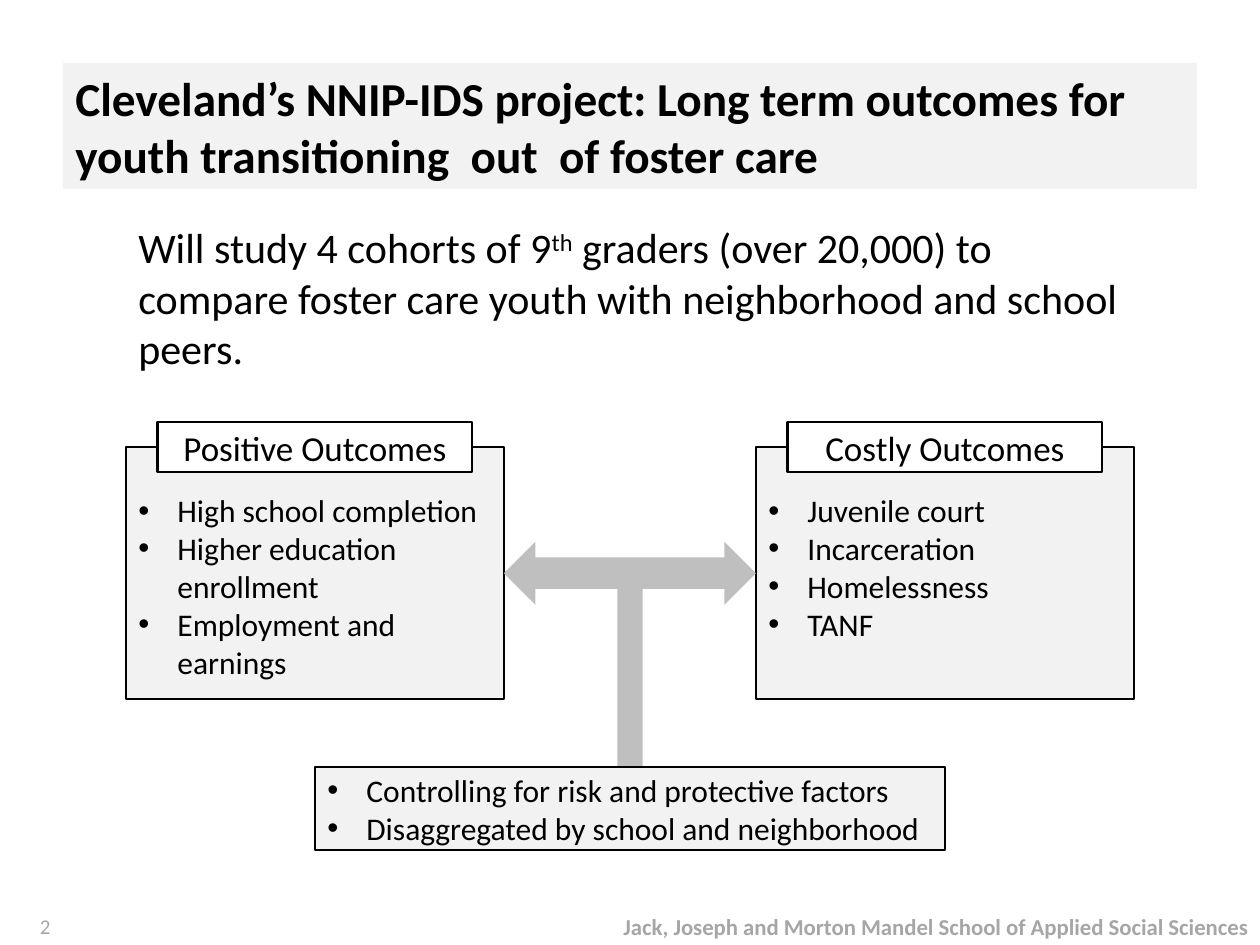
from dataclasses import dataclass

import pptx
import pptx.dml.color
import pptx.enum.shapes
import pptx.enum.text
import pptx.oxml.ns
import pptx.util
from lxml import etree

Inches = pptx.util.Inches
Kind = pptx.enum.shapes.MSO_SHAPE
Align = pptx.enum.text.PP_ALIGN
Anchor = pptx.enum.text.MSO_ANCHOR


@dataclass(frozen=True)
class Theme:
    font: str = "Calibri"
    ink: str = "000000"
    paper: str = "FFFFFF"
    panel: str = "F2F2F2"
    arrow: str = "BFBFBF"
    muted: str = "A6A6A6"
    title: float = 27
    body: float = 24
    label: float = 20
    item: float = 18
    footer: float = 13
    number: float = 12
    edge: float = 1.25


@dataclass(frozen=True)
class Box:
    left: float
    top: float
    width: float
    height: float

    def lengths(self) -> tuple:
        return tuple(Inches(n) for n in (self.left, self.top, self.width, self.height))


@dataclass(frozen=True)
class Group:
    left: float
    label: str
    items: tuple[str, ...]


THEME = Theme()
GROUPS = (
    Group(1, "Positive Outcomes",
          ("High school completion", "Higher education enrollment", "Employment and earnings")),
    Group(6, "Costly Outcomes",
          ("Juvenile court", "Incarceration", "Homelessness", "TANF")),
)
FACTORS = ("Controlling for risk and protective factors",
           "Disaggregated by school and neighborhood")


def color(code: str):
    return pptx.dml.color.RGBColor.from_string(code)


def add_shape(slide, box: Box, fill: str, edged: bool = False, kind=Kind.RECTANGLE):
    shape = slide.shapes.add_shape(kind, *box.lengths())
    shape.shadow.inherit = False
    shape.fill.solid()
    shape.fill.fore_color.rgb = color(fill)
    if edged:
        shape.line.color.rgb = color(THEME.ink)
        shape.line.width = pptx.util.Pt(THEME.edge)
    else:
        shape.line.fill.background()
    return shape


def add_bullet(par) -> None:
    props = par._p.get_or_add_pPr()
    props.set("marL", str(Inches(0.31)))
    props.set("indent", str(-Inches(0.31)))
    for tag, name, value in (("a:buFont", "typeface", "Arial"), ("a:buChar", "char", "•")):
        etree.SubElement(props, pptx.oxml.ns.qn(tag)).set(name, value)


def write(shape, lines: tuple[str, ...], size: float, ink: str = THEME.ink,
          bold: bool = False, align=Align.LEFT, anchor=Anchor.MIDDLE,
          bullets: bool = False) -> None:
    frame = shape.text_frame
    frame.word_wrap = True
    frame.vertical_anchor = anchor
    frame.text = "\n".join(lines)
    for par in frame.paragraphs:
        par.alignment = align
        par.font.name = THEME.font
        par.font.size = pptx.util.Pt(size)
        par.font.bold = bold
        par.font.color.rgb = color(ink)
        if bullets:
            add_bullet(par)


def add_text(slide, box: Box, text: str, size: float, **style):
    shape = slide.shapes.add_textbox(*box.lengths())
    write(shape, (text,), size, **style)
    return shape


def add_group(slide, group: Group) -> None:
    panel = add_shape(slide, Box(group.left, 3.55, 3, 2), THEME.panel, edged=True)
    write(panel, group.items, THEME.item, anchor=Anchor.TOP, bullets=True)
    panel.text_frame.margin_top = Inches(0.35)  # room under the label
    label = add_shape(slide, Box(group.left + 0.25, 3.35, 2.5, 0.4), THEME.paper, edged=True)
    write(label, (group.label,), THEME.label, align=Align.CENTER)


def main() -> None:
    deck = pptx.Presentation()
    deck.slide_width, deck.slide_height = Inches(10), Inches(7.5)
    slide = deck.slides.add_slide(deck.slide_layouts[6])

    # Footer
    for box, text, size, bold in (
        (Box(4, 7.2, 6, 0.3), "Jack, Joseph and Morton Mandel School of Applied Social Sciences",
         THEME.footer, True),
        (Box(0, 7.2, 0.5, 0.3), "2", THEME.number, False),
    ):
        add_text(slide, box, text, size, ink=THEME.muted, bold=bold, align=Align.RIGHT)

    # Title
    title = add_shape(slide, Box(0.5, 0.5, 9, 1), THEME.panel)
    write(title, ("Cleveland’s NNIP-IDS project: Long term outcomes for "
                  "youth transitioning  out  of foster care",), THEME.title, bold=True)

    # Study summary, with a raised ordinal
    intro = add_text(slide, Box(1, 1.71, 8, 1.31), "Will study 4 cohorts of 9",
                     THEME.body, anchor=Anchor.TOP)
    par = intro.text_frame.paragraphs[0]
    raised = par.add_run()
    raised.text = "th"
    raised._r.get_or_add_rPr().set("baseline", "30000")
    par.add_run().text = (" graders (over 20,000) to compare foster care youth "
                          "with neighborhood and school peers.")

    # Outcome groups
    for group in GROUPS:
        add_group(slide, group)

    # Arrow between the groups and its stem
    add_shape(slide, Box(4, 4.3, 2, 0.5), THEME.arrow, kind=Kind.LEFT_RIGHT_ARROW)
    add_shape(slide, Box(4.9, 4.65, 0.2, 1.45), THEME.arrow)

    # Factors
    base = add_shape(slide, Box(2.5, 6.09, 5, 0.66), THEME.panel, edged=True)
    write(base, FACTORS, THEME.item, bullets=True)

    deck.save("out.pptx")


if __name__ == "__main__":
    main()
